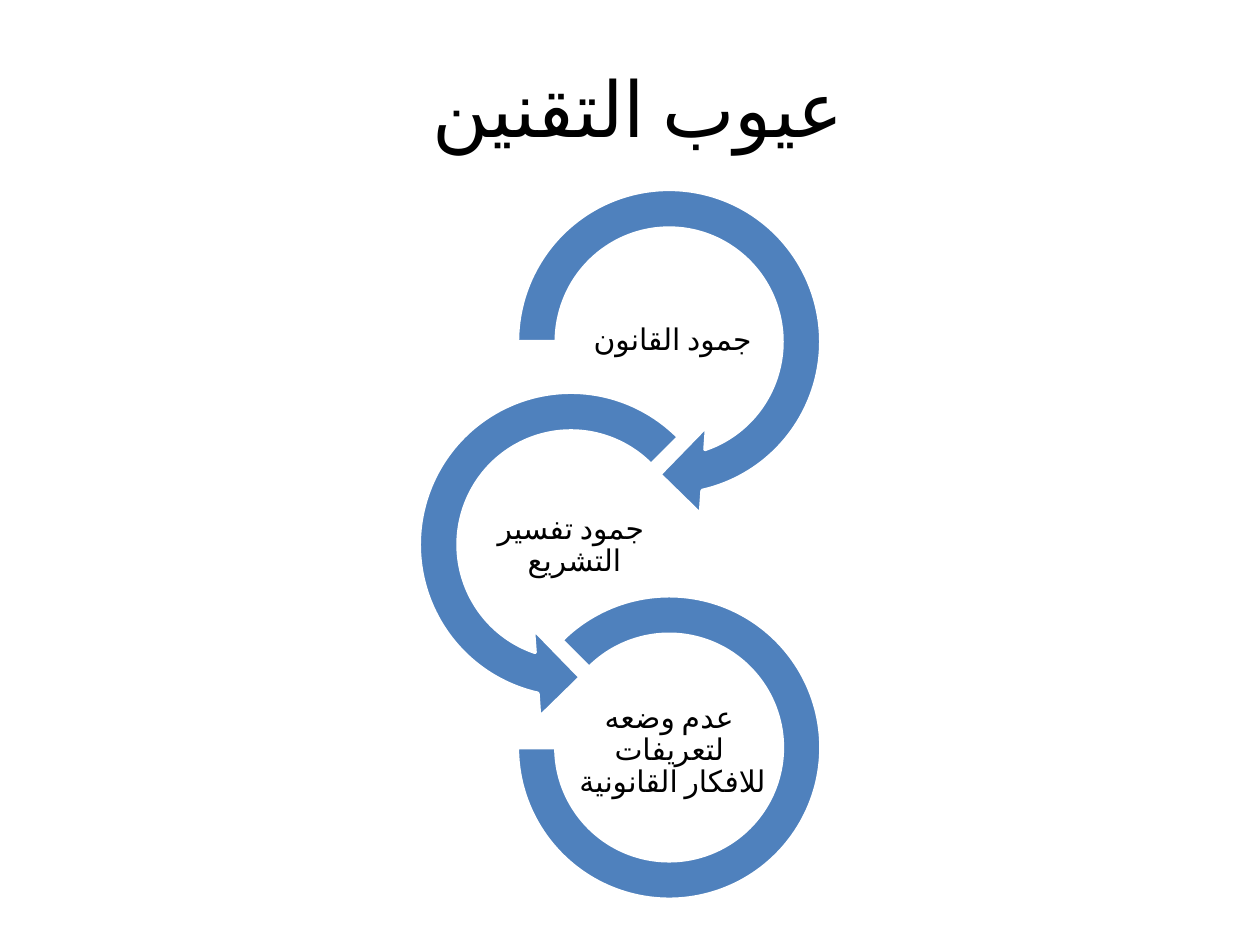
from dataclasses import dataclass

from lxml import etree
from pptx import Presentation
from pptx.dml.color import RGBColor
from pptx.enum import lang, shapes, text
from pptx.oxml.ns import qn
from pptx.util import Cm, Pt


@dataclass(frozen=True)
class Theme:
    font: str = "Calibri"
    ink: RGBColor = RGBColor(0x00, 0x00, 0x00)
    ring: RGBColor = RGBColor(0x4F, 0x81, 0xBD)
    outline: RGBColor = RGBColor(0xFF, 0xFF, 0xFF)
    outline_width: float = 2
    title_size: float = 44
    label_size: float = 17


THEME = Theme()
KIND = shapes.MSO_SHAPE
ARROW_SIZE = (7.11, 7.14)
ARC_SIZE = (6.12, 6.12)
LABEL_SIZE = (3.96, 1.98)
CENTRE_X, SHIFT_X = 13.49, 1.98
RING_Y, RING_STEP = 6.89, 4.09
LABEL_Y, LABEL_STEP = 6.88, 4.13

STAGES = [
    ("جمود القانون ", KIND.CIRCULAR_ARROW, ARROW_SIZE,
     (0.11, 11.423, 45, 108, 0.125), 0),
    ("جمود تفسير التشريع ", KIND.LEFT_CIRCULAR_ARROW, ARROW_SIZE,
     (0.11, 11.423, 63, 189, 0.125), SHIFT_X),
    ("عدم وضعه لتعريفات للافكار القانونية ", KIND.BLOCK_ARC, ARC_SIZE,
     (135, 108, 0.127), 0),
]


def centred_box(centre_x, centre_y, size):
    width, height = size
    return (Cm(centre_x - width / 2), Cm(centre_y - height / 2),
            Cm(width), Cm(height))


def add_ring(slide, kind, box, adjustments):
    shape = slide.shapes.add_shape(kind, *box)
    for index, value in enumerate(adjustments):
        shape.adjustments[index] = value
    shape.shadow.inherit = False
    shape.fill.solid()
    shape.fill.fore_color.rgb = THEME.ring
    shape.line.color.rgb = THEME.outline
    shape.line.width = Pt(THEME.outline_width)


def format_arabic(run, size):
    font = run.font
    font.name = THEME.font
    font.size = Pt(size)
    font.color.rgb = THEME.ink
    font.language_id = lang.MSO_LANGUAGE_ID.ARABIC
    complex_script = etree.SubElement(run._r.get_or_add_rPr(), qn("a:cs"))
    complex_script.set("typeface", THEME.font)


def add_text(slide, wording, box, size, margin, line_spacing):
    text_frame = slide.shapes.add_textbox(*box).text_frame
    text_frame.word_wrap = True
    text_frame.vertical_anchor = text.MSO_ANCHOR.MIDDLE
    text_frame.margin_left = text_frame.margin_right = Cm(margin[0])
    text_frame.margin_top = text_frame.margin_bottom = Cm(margin[1])
    text_frame.text = wording
    paragraph = text_frame.paragraphs[0]
    paragraph.alignment = text.PP_ALIGN.CENTER
    paragraph.line_spacing = line_spacing
    paragraph._p.get_or_add_pPr().set("rtl", "1")
    format_arabic(paragraph.runs[0], size)


def main():
    presentation = Presentation()
    presentation.slide_width = Cm(25.4)
    presentation.slide_height = Cm(19.05)
    slide = presentation.slides.add_slide(presentation.slide_layouts[6])

    title_box = (Cm(1.27), Cm(0.76), Cm(22.86), Cm(2.77))
    add_text(slide, "عيوب التقنين ", title_box, THEME.title_size,
             (0.25, 0.13), 1.0)

    for row, (wording, kind, size, adjustments, shift) in enumerate(STAGES):
        centre_x = CENTRE_X - shift
        ring_box = centred_box(centre_x, RING_Y + row * RING_STEP, size)
        add_ring(slide, kind, ring_box, adjustments)
        label_box = centred_box(centre_x, LABEL_Y + row * LABEL_STEP, LABEL_SIZE)
        add_text(slide, wording, label_box, THEME.label_size, (0.03, 0.03), 0.9)

    presentation.save("out.pptx")


if __name__ == "__main__":
    main()
